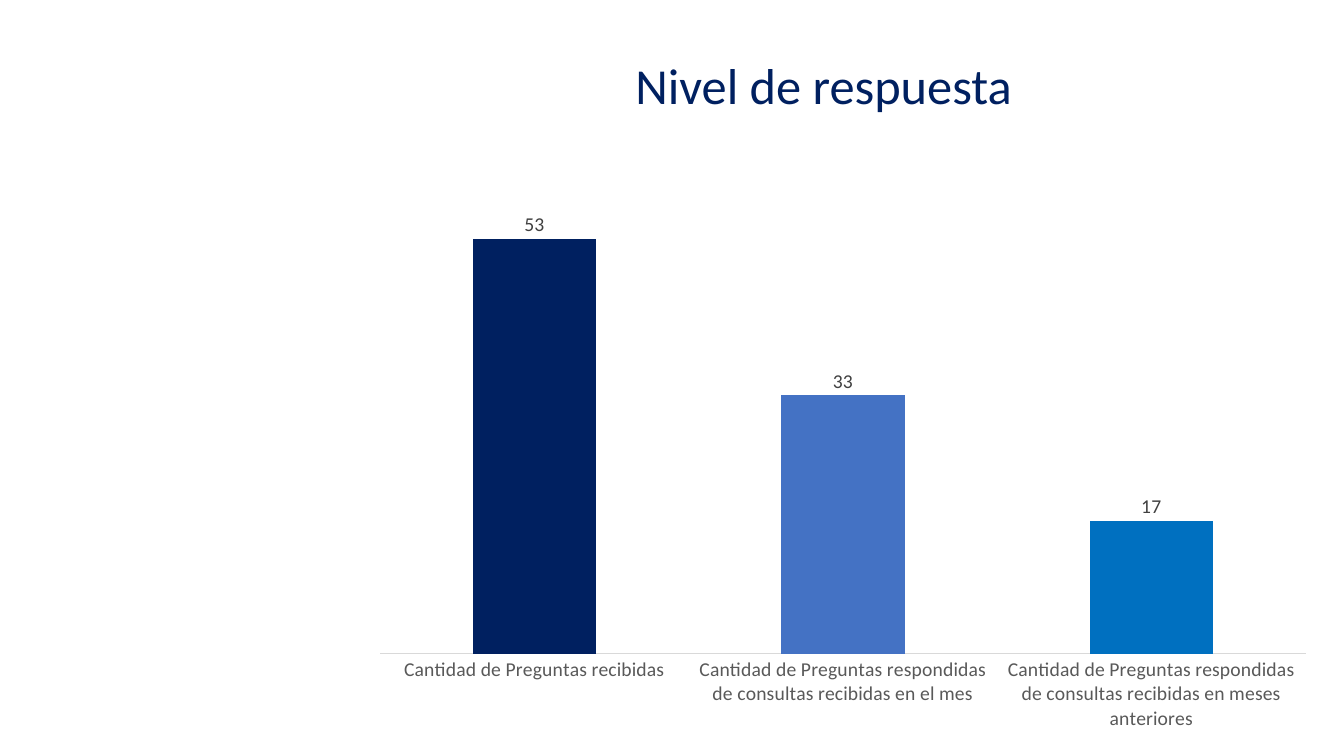
"""Build the slide on the response level to questions."""
from lxml import etree
from pptx import Presentation
from pptx.chart.data import CategoryChartData
from pptx.dml.color import RGBColor
from pptx.enum.chart import XL_CHART_TYPE as ChartType, XL_LABEL_POSITION as LabelPosition
from pptx.enum.chart import XL_TICK_MARK as TickMark
from pptx.enum.text import MSO_ANCHOR, PP_ALIGN
from pptx.oxml.ns import qn
from pptx.util import Inches, Pt

TITLE = "Nivel de respuesta"
QUESTIONS = [
    ("Cantidad de Preguntas recibidas", 53, "002060"),
    ("Cantidad de Preguntas respondidas de consultas recibidas en el mes", 33, "4472C4"),
    ("Cantidad de Preguntas respondidas de consultas recibidas en meses anteriores", 17, "0070C0"),
]
FONT = "Calibri"
TITLE_BOX = (4.8, 0.26, 6.74, 1.23)
CHART_BOX = (3.58, 1.71, 9.56, 5.65)
LABEL_RISE = -0.053


def rgb(color):
    return RGBColor.from_string(color)


def style_font(font, size, color):
    font.name, font.size, font.bold = FONT, Pt(size), False
    font.color.rgb = rgb(color)


def raise_label(label):
    """Lift a value label from inside its bar to just above it."""
    label.position = LabelPosition.INSIDE_END
    style_font(label.font, 14, "404040")
    element = label.font._element.getparent().getparent().getparent().getparent()
    layout = etree.Element(qn("c:layout"))
    manual = etree.SubElement(layout, qn("c:manualLayout"))
    for tag, value in (("c:x", 0), ("c:y", LABEL_RISE)):
        etree.SubElement(manual, qn(tag)).set("val", str(value))
    element.find(qn("c:idx")).addnext(layout)


def add_title(slide):
    title = slide.shapes.title
    title.left, title.top, title.width, title.height = map(Inches, TITLE_BOX)
    title.text_frame.text = TITLE
    title.text_frame.vertical_anchor = MSO_ANCHOR.MIDDLE
    paragraph = title.text_frame.paragraphs[0]
    paragraph.alignment = PP_ALIGN.CENTER
    paragraph.line_spacing = 0.9
    style_font(paragraph.font, 36, "002060")


def add_response_chart(slide):
    names, counts, colors = zip(*QUESTIONS)
    data = CategoryChartData()
    data.categories = names
    data.add_series("Series 1", counts)
    chart = slide.shapes.add_chart(
        ChartType.COLUMN_STACKED, *map(Inches, CHART_BOX), data).chart
    chart.has_legend = chart.has_title = False
    style_font(chart.font, 14, "000000")

    count_axis = chart.value_axis
    count_axis.visible = count_axis.has_major_gridlines = False
    count_axis.minimum_scale, count_axis.maximum_scale = 0, 60
    question_axis = chart.category_axis
    question_axis.major_tick_mark = question_axis.minor_tick_mark = TickMark.NONE
    question_axis.format.line.color.rgb = rgb("D9D9D9")
    question_axis.format.line.width = Pt(0.75)
    style_font(question_axis.tick_labels.font, 14, "595959")

    plot = chart.plots[0]
    plot.gap_width, plot.overlap, plot.vary_by_categories = 150, 100, False
    bars = plot.series[0]
    bars.format.fill.solid()
    bars.format.fill.fore_color.rgb = rgb(colors[0])
    bars.data_labels.show_value = True
    bars.data_labels.position = LabelPosition.INSIDE_END
    style_font(bars.data_labels.font, 14, "404040")
    for index, color in enumerate(colors):
        bar = bars.points[index]
        bar.format.fill.solid()
        bar.format.fill.fore_color.rgb = rgb(color)
        raise_label(bar.data_label)


def main():
    deck = Presentation()
    deck.slide_width, deck.slide_height = Inches(13.33), Inches(7.5)
    slide = deck.slides.add_slide(deck.slide_layouts[5])
    add_title(slide)
    add_response_chart(slide)
    deck.save("out.pptx")


if __name__ == "__main__":
    main()
